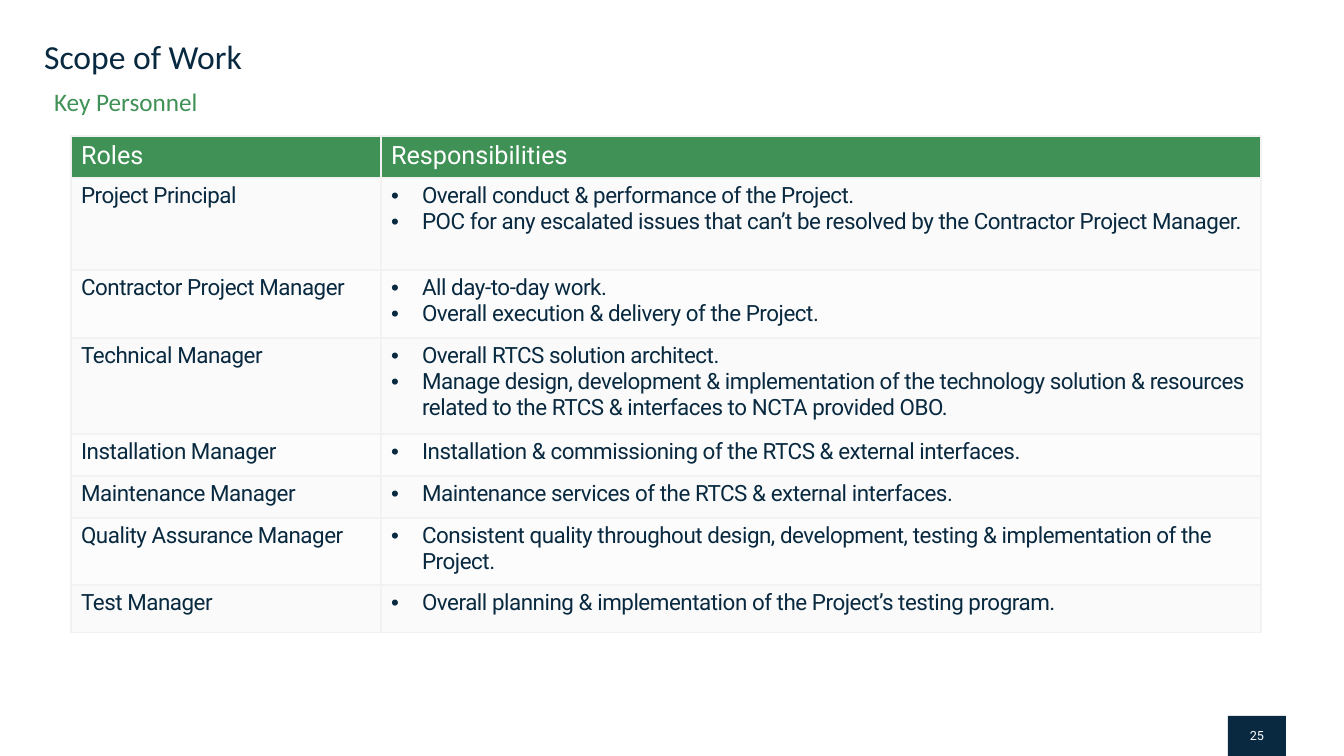
from lxml.etree import SubElement
from pptx import Presentation
from pptx.dml.color import RGBColor
from pptx.enum.shapes import MSO_SHAPE
from pptx.enum.text import MSO_ANCHOR, MSO_AUTO_SIZE, PP_ALIGN
from pptx.oxml.ns import qn
from pptx.util import Pt

EMU_PER_PX = 914400 / 100.8
GREEN, NAVY, WHITE, BORDER = "3F9155", "08293F", "FFFFFF", "F1F2F1"
ROW_FILLS = ("FCFCFC", "FAFAFA")
COLUMN_WIDTHS = (310, 880)
ROW_HEIGHTS = (42, 92, 68, 96, 42, 42, 67, 48)
HEADER = ("Roles", "Responsibilities")
PERSONNEL = (
    ("Project Principal", (
        "Overall conduct & performance of the Project.",
        "POC for any escalated issues that can’t be resolved by the Contractor Project Manager.")),
    ("Contractor Project Manager", (
        "All day-to-day work.",
        "Overall execution & delivery of the Project.")),
    ("Technical Manager", (
        "Overall RTCS solution architect.",
        "Manage design, development & implementation of the technology solution & resources "
        "related to the RTCS & interfaces to NCTA provided OBO.")),
    ("Installation Manager", (
        "Installation & commissioning of the RTCS & external interfaces.",)),
    ("Maintenance Manager", (
        "Maintenance services of the RTCS & external interfaces.",)),
    ("Quality Assurance Manager", (
        "Consistent quality throughout design, development, testing & implementation "
        "of the Project.",)),
    ("Test Manager", (
        "Overall planning & implementation of the Project’s testing program.",)),
)


def px(length):
    return round(length * EMU_PER_PX)


def color(hex_code):
    return RGBColor.from_string(hex_code)


class SlideBuilder:
    heading_font = "Calibri"
    text_font = "Roboto"

    def __init__(self, slide):
        self.slide = slide

    def format_runs(self, paragraph, font_name, size, hex_code, tracking=None):
        for run in paragraph.runs:
            run.font.name = font_name
            run.font.size = Pt(size)
            run.font.bold = False
            run.font.color.rgb = color(hex_code)
            if tracking is not None:
                run.font._element.set("spc", str(tracking))

    def placeholder(self, index, text, box, size, hex_code, anchor):
        shape = self.slide.placeholders[index]
        shape.left, shape.top, shape.width, shape.height = map(px, box)
        text_frame = shape.text_frame
        text_frame.text = text
        text_frame.auto_size = MSO_AUTO_SIZE.NONE
        text_frame.vertical_anchor = anchor
        paragraph = text_frame.paragraphs[0]
        properties = paragraph._p.get_or_add_pPr()
        properties.set("marL", "0")
        properties.set("indent", "0")
        SubElement(properties, qn("a:buNone"))
        paragraph.alignment = PP_ALIGN.LEFT
        paragraph.line_spacing = 0.9
        paragraph.space_before = Pt(0)
        self.format_runs(paragraph, self.heading_font, size, hex_code)

    def page_number(self, text, box):
        shape = self.slide.shapes.add_shape(MSO_SHAPE.RECTANGLE, *map(px, box))
        shape.shadow.inherit = False
        shape.fill.solid()
        shape.fill.fore_color.rgb = color(NAVY)
        shape.line.fill.background()
        shape.text_frame.text = text
        shape.text_frame.vertical_anchor = MSO_ANCHOR.MIDDLE
        paragraph = shape.text_frame.paragraphs[0]
        paragraph.alignment = PP_ALIGN.CENTER
        self.format_runs(paragraph, self.text_font, 9, WHITE)

    def bullet(self, paragraph):
        properties = paragraph._p.get_or_add_pPr()
        properties.set("marL", str(px(31)))
        properties.set("indent", str(px(-31)))
        SubElement(properties, qn("a:buFont"), typeface="Arial")
        SubElement(properties, qn("a:buChar"), char="•")

    def cell(self, cell, lines, fill, size, hex_code, bulleted=False, tracking=None):
        cell.text_frame.text = "\n".join(lines)
        for paragraph in cell.text_frame.paragraphs:
            if bulleted:
                self.bullet(paragraph)
            self.format_runs(paragraph, self.text_font, size, hex_code, tracking)
        properties = cell._tc.get_or_add_tcPr()
        for side in ("a:lnL", "a:lnR", "a:lnT", "a:lnB"):
            border = SubElement(properties, qn(side), w=str(Pt(1)))
            solid = SubElement(border, qn("a:solidFill"))
            SubElement(solid, qn("a:srgbClr"), val=BORDER)
        cell.fill.solid()
        cell.fill.fore_color.rgb = color(fill)

    def personnel_table(self, left, top):
        box = (left, top, sum(COLUMN_WIDTHS), sum(ROW_HEIGHTS))
        frame = self.slide.shapes.add_table(
            len(ROW_HEIGHTS), len(COLUMN_WIDTHS), *map(px, box))
        table = frame.table
        table.horz_banding = False
        for column, width in zip(table.columns, COLUMN_WIDTHS):
            column.width = px(width)
        for row, height in zip(table.rows, ROW_HEIGHTS):
            row.height = px(height)
        for column, heading in enumerate(HEADER):
            self.cell(table.cell(0, column), [heading], GREEN, 18, WHITE)
        for row, (role, duties) in enumerate(PERSONNEL, start=1):
            fill = ROW_FILLS[row % 2]
            self.cell(table.cell(row, 0), [role], fill, 16, NAVY, tracking=-30)
            self.cell(table.cell(row, 1), duties, fill, 16, NAVY, bulleted=True, tracking=-30)


def main():
    presentation = Presentation()
    presentation.slide_width, presentation.slide_height = px(1344), px(756)
    slide = presentation.slides.add_slide(presentation.slide_layouts[1])
    builder = SlideBuilder(slide)
    builder.page_number("25", (1228, 716, 58, 40))
    builder.placeholder(0, "Scope of Work", (34, 43, 1239, 31), 24, "082940", MSO_ANCHOR.MIDDLE)
    builder.placeholder(1, "Key Personnel", (44, 85, 1239, 40), 18, "409155", MSO_ANCHOR.TOP)
    builder.personnel_table(71, 136)
    presentation.save("out.pptx")


if __name__ == "__main__":
    main()
